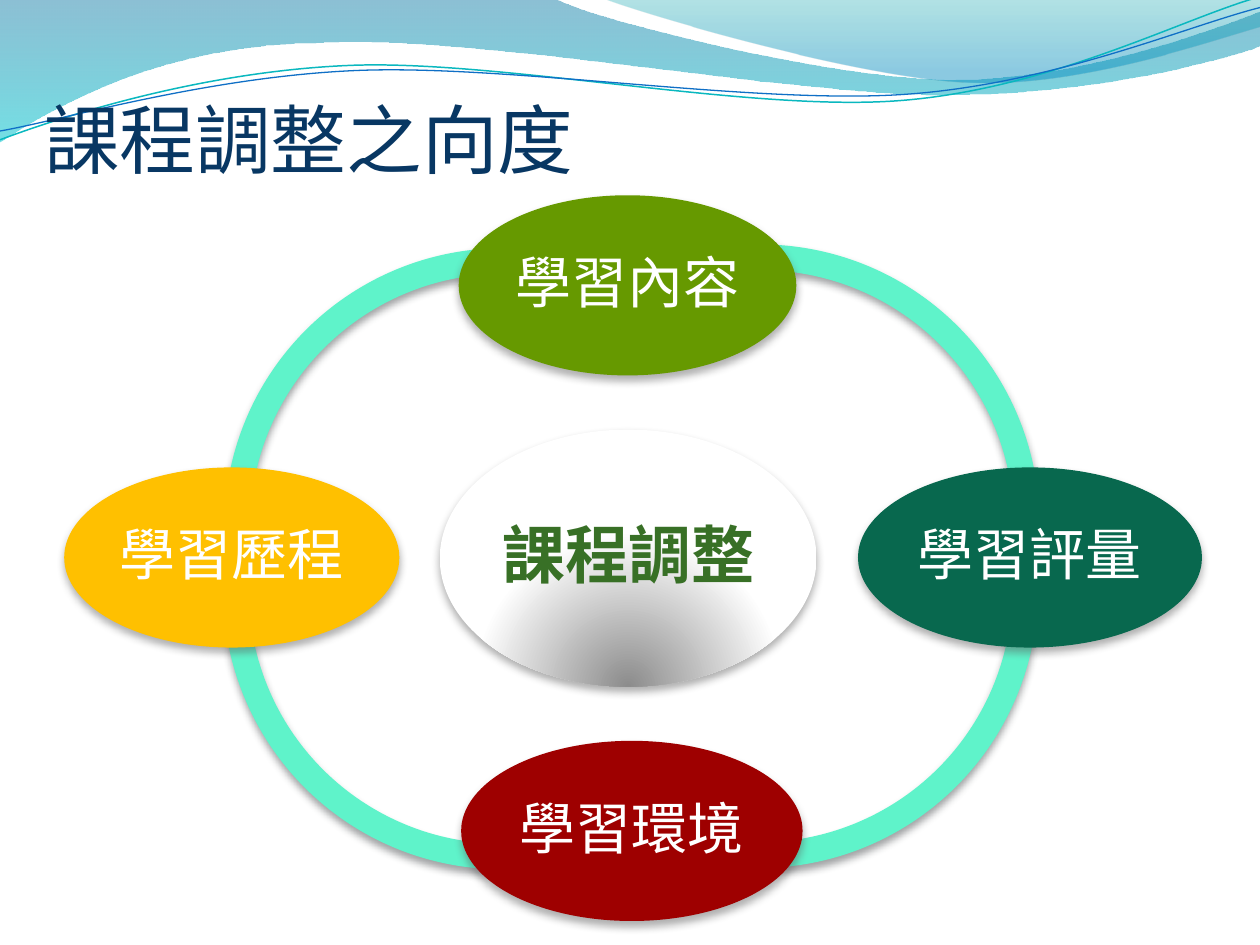
"""Build the slide showing the four dimensions of curriculum adjustment."""
import pptx
import pptx.dml.color
import pptx.enum.shapes
import pptx.enum.text
import pptx.oxml
import pptx.oxml.ns
import pptx.util
from pptx.util import Inches

FONT = "Noto Sans CJK SC"
SHAPE = pptx.enum.shapes.MSO_SHAPE
ANCHOR = pptx.enum.text.MSO_ANCHOR
ALIGN = pptx.enum.text.PP_ALIGN
NAMESPACE = pptx.oxml.ns.nsdecls("a")
qn = pptx.oxml.ns.qn


def color(value):
    """Turn a hex string into a colour."""
    return pptx.dml.color.RGBColor.from_string(value)


def gradient(stops, direction):
    """Make a gradient fill from (position, colour, opacity) stops."""
    marks = "".join(
        f'<a:gs pos="{position * 1000}"><a:srgbClr val="{value}">'
        f'<a:alpha val="{opacity * 1000}"/></a:srgbClr></a:gs>'
        for position, value, opacity in stops
    )
    return pptx.oxml.parse_xml(
        f'<a:gradFill {NAMESPACE} rotWithShape="1">'
        f"<a:gsLst>{marks}</a:gsLst>{direction}</a:gradFill>"
    )


deck = pptx.Presentation()
deck.slide_width, deck.slide_height = Inches(10), Inches(7.5)
slide = deck.slides.add_slide(deck.slide_layouts[5])
shapes = slide.shapes

downward = '<a:lin ang="5400000" scaled="0"/>'
waves = [
    ((0, -0.01), [
        (4.4, -0.01),
        (4.76, 0.17, 6.64, 0.63, 7.58, 0.63),
        (8.53, 0.63, 9.58, 0.26, 10, 0.09),
        (10.01, 0.36),
        (9.83, 0.44, 8.7, 0.76, 7.46, 0.75),
        (6.22, 0.75, 3.82, 0.28, 2.57, 0.34),
        (1.29, 0.35, 0.46, 0.83, -0.01, 1.13),
        (0, -0.01),
    ], [(0, "0074A1", 45), (100, "00C6CF", 55)], None),
    ((4.79, -0.01), [
        (5.09, 0.11, 6.82, 0.62, 7.69, 0.65),
        (8.56, 0.69, 9.61, 0.32, 10, 0.21),
        (10, 0),
        (4.79, -0.01),
    ], [(0, "00A1A9", 30), (80, "008BBF", 45)], None),
    ((0, 1.11), [
        (0.48, 0.93, 1.58, 0.57, 2.77, 0.52),
        (3.95, 0.47, 5.93, 0.89, 7.13, 0.8),
        (8.33, 0.71, 9.38, 0.15, 9.98, -0.02),
    ], None, ("0AB8BF", 0.85)),
    ((0, 1.04), [
        (0.47, 0.96, 1.64, 0.61, 2.83, 0.56),
        (4.03, 0.51, 5.97, 0.83, 7.17, 0.75),
        (8.36, 0.67, 9.41, 0.21, 10, 0.06),
    ], None, ("0F6FC6", 0.75)),
]
for (start_x, start_y), segments, stops, stroke in waves:
    points = [(Inches(x), Inches(y)) for segment in segments
              for x, y in zip(segment[::2], segment[1::2])]
    builder = shapes.build_freeform(Inches(start_x), Inches(start_y))
    builder.add_line_segments(points, close=stroke is None)
    wave = builder.convert_to_shape()
    straight_steps = iter(list(wave._element.iter(qn("a:lnTo"))))
    for segment in segments:
        steps = [next(straight_steps) for _ in segment[::2]]
        if len(steps) == 3:
            curve = pptx.oxml.parse_xml(f"<a:cubicBezTo {NAMESPACE}/>")
            steps[0].addprevious(curve)
            for step in steps:
                curve.append(step[0])
                step.getparent().remove(step)
    wave.shadow.inherit = False
    wave.fill.background()
    if stroke:
        wave.line.color.rgb = color(stroke[0])
        wave.line.width = pptx.util.Pt(stroke[1])
    else:
        wave.line.fill.background()
        properties = wave._element.spPr
        properties.replace(properties.find(qn("a:noFill")), gradient(stops, downward))

heading = shapes.title
shapes._spTree.append(heading._element)
heading_box = {"left": 0.35, "top": 0.68, "width": 9.08, "height": 0.78}
for name, value in heading_box.items():
    setattr(heading, name, Inches(value))

RING = 4.43
arcs = [
    (1.78, 1.97, (104.149, 178.41, 0.046)),
    (1.77, 2.47, (36.956, 112.158, 0.046)),
    (3.81, 2.46, (211.988, 70.736, 0.046)),
    (3.82, 1.94, (144.627, 4.309, 0.046)),
]
shadowed = []
for left, top, adjustments in arcs:
    arc = shapes.add_shape(
        SHAPE.BLOCK_ARC, Inches(left), Inches(top), Inches(RING), Inches(RING))
    for index, adjustment in enumerate(adjustments):
        arc.adjustments[index] = adjustment
    arc.fill.solid()
    arc.fill.fore_color.rgb = color("5FF3CA")
    shadowed.append((arc, "3C4043"))

dimensions = [
    ("課程調整", 3.49, 3.41, 2.99, 2.04, None, 36, True, "387026", 0.05),
    ("學習內容", 3.64, 1.55, 2.68, 1.43, "669900", 32, False, "FFFFFF", 0.04),
    ("學習評量", 6.81, 3.71, 2.73, 1.43, "08684E", 32, False, "FFFFFF", 0.04),
    ("學習環境", 3.66, 5.88, 2.71, 1.43, "9E0000", 32, False, "FFFFFF", 0.04),
    ("學習歷程", 0.51, 3.71, 2.66, 1.43, "FFC000", 32, False, "FFFFFF", 0.04),
]
glow = ('<a:path path="circle"><a:fillToRect l="50000" t="130000" '
        'r="50000" b="-30000"/></a:path>')
labels = [(heading, "課程調整之向度", 43.2, False, "083763", (0, 0.05, 0, 0),
           ANCHOR.BOTTOM, {"alignment": ALIGN.LEFT})]
for wording, left, top, width, height, fill, size, bold, ink, inset in dimensions:
    oval = shapes.add_shape(
        SHAPE.OVAL, Inches(left), Inches(top), Inches(width), Inches(height))
    if fill:
        oval.fill.solid()
        oval.fill.fore_color.rgb = color(fill)
    else:
        oval.fill.background()
        properties = oval._element.spPr
        properties.replace(properties.find(qn("a:noFill")), gradient(
            [(0, "8C8C8C", 100), (68, "FFFFFF", 100), (100, "FFFFFF", 100)], glow))
    shadowed.append((oval, "5A5A5A"))
    spacing = {"alignment": ALIGN.CENTER, "line_spacing": 0.9,
               "space_after": pptx.util.Pt(size * 0.35)}
    labels.append((oval, wording, size, bold, ink, (inset,) * 4, ANCHOR.MIDDLE, spacing))

for part, shade in shadowed:
    part.line.fill.background()
    part.shadow.inherit = False
    part._element.spPr.find(qn("a:effectLst")).append(pptx.oxml.parse_xml(
        f'<a:outerShdw {NAMESPACE} blurRad="57150" dist="38100" '
        f'dir="5400000" algn="ctr" rotWithShape="0"><a:srgbClr val="{shade}">'
        '<a:alpha val="48000"/></a:srgbClr></a:outerShdw>'))

for part, wording, size, bold, ink, insets, anchor, spacing in labels:
    frame = part.text_frame
    frame_format = {
        "word_wrap": True,
        "auto_size": pptx.enum.text.MSO_AUTO_SIZE.NONE,
        "vertical_anchor": anchor,
    }
    for side, inset in zip(("left", "top", "right", "bottom"), insets):
        frame_format[f"margin_{side}"] = Inches(inset)
    for name, value in frame_format.items():
        setattr(frame, name, value)
    paragraph = frame.paragraphs[0]
    for name, value in spacing.items():
        setattr(paragraph, name, value)
    run = paragraph.add_run()
    run.text = wording
    font_format = {"name": FONT, "size": pptx.util.Pt(size), "bold": bold}
    for name, value in font_format.items():
        setattr(run.font, name, value)
    run.font.color.rgb = color(ink)
    run._r.get_or_add_rPr().append(pptx.oxml.parse_xml(
        f'<a:ea {NAMESPACE} typeface="{FONT}"/>'))

deck.save("out.pptx")
